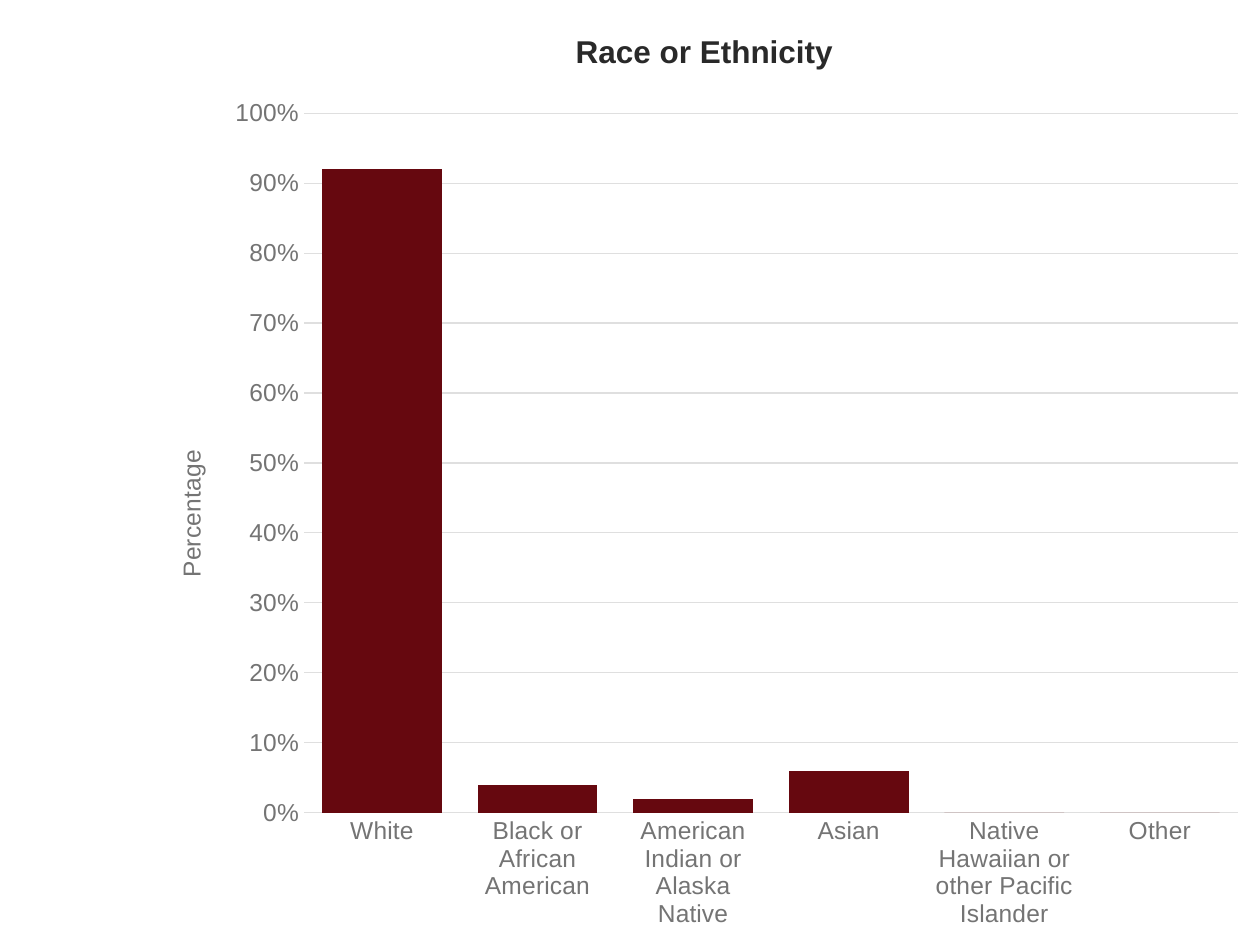
"""Build a slide with a column chart of race or ethnicity shares."""
from dataclasses import dataclass

from lxml.etree import SubElement
from pptx import Presentation
from pptx.chart.data import CategoryChartData
from pptx.dml.color import RGBColor
from pptx.enum.chart import XL_CHART_TYPE, XL_TICK_MARK
from pptx.oxml import parse_xml
from pptx.oxml.ns import nsdecls, qn
from pptx.util import Inches, Pt

TITLE = "Race or Ethnicity"
VALUE_TITLE = "Percentage"
SHARES = {
    "White": 0.92,
    "Black or African American": 0.04,
    "American Indian or Alaska Native": 0.02,
    "Asian": 0.06,
    "Native Hawaiian or other Pacific Islander": 0,
    "Other": 0,
}
PLOT_SHARES = {"x": 0.14, "y": 0.12, "w": 0.84, "h": 0.74}
SLIDE_WIDTH, SLIDE_HEIGHT = Inches(10), Inches(7.5)
CHART_LEFT = Inches(1.18)


@dataclass(frozen=True)
class Theme:
    font: str = "Arial"
    dark: str = "292929"
    muted: str = "747474"
    rule: str = "DFDFDF"
    column: str = "66080F"
    base_size: int = 10
    label_size: int = 14
    title_size: int = 18
    rule_width: float = 0.75


THEME = Theme()


def style_font(font, size, color, bold=False):
    font.name, font.size, font.bold = THEME.font, Pt(size), bold
    font.color.rgb = RGBColor.from_string(color)


def style_rule(line):
    line.color.rgb = RGBColor.from_string(THEME.rule)
    line.width = Pt(THEME.rule_width)


def write_title(frame, text, size, color, bold=False):
    frame.text = text
    style_font(frame.paragraphs[0].font, size, color, bold)


def place_plot(chart):
    plot_area = chart._chartSpace.chart.plotArea
    for old_layout in plot_area.findall(qn("c:layout")):
        plot_area.remove(old_layout)
    layout = parse_xml(f"<c:layout {nsdecls('c')}/>")
    manual = SubElement(layout, qn("c:manualLayout"))
    settings = {"layoutTarget": "inner", "xMode": "edge", "yMode": "edge", **PLOT_SHARES}
    for tag, value in settings.items():
        SubElement(manual, qn(f"c:{tag}")).set("val", str(value))
    plot_area.insert(0, layout)


def style_axes(chart):
    categories, values = chart.category_axis, chart.value_axis
    for axis in (categories, values):
        axis.major_tick_mark = axis.minor_tick_mark = XL_TICK_MARK.NONE
        style_font(axis.tick_labels.font, THEME.label_size, THEME.muted)
    style_rule(categories.format.line)
    values.format.line.fill.background()
    values.minimum_scale, values.maximum_scale, values.major_unit = 0, 1, 0.1
    values.tick_labels.number_format = "0%"
    values.tick_labels.number_format_is_linked = False
    style_rule(values.major_gridlines.format.line)
    value_title = values.axis_title.text_frame
    write_title(value_title, VALUE_TITLE, THEME.label_size, THEME.muted)
    value_title._txBody.bodyPr.set("rot", "-5400000")


def add_share_chart(slide):
    data = CategoryChartData(number_format="0%")
    data.categories = list(SHARES)
    data.add_series("Series 1", list(SHARES.values()))
    chart = slide.shapes.add_chart(
        XL_CHART_TYPE.COLUMN_CLUSTERED, CHART_LEFT, 0,
        SLIDE_WIDTH - CHART_LEFT, SLIDE_HEIGHT, data,
    ).chart
    style_font(chart.font, THEME.base_size, THEME.dark)
    chart.has_legend = False
    write_title(chart.chart_title.text_frame, TITLE, THEME.title_size, THEME.dark, True)
    chart.chart_title.include_in_layout = False
    columns = chart.plots[0]
    columns.gap_width, columns.overlap = 30, -27
    columns.vary_by_categories = False
    fill = columns.series[0].format.fill
    fill.solid()
    fill.fore_color.rgb = RGBColor.from_string(THEME.column)
    style_axes(chart)
    place_plot(chart)


def main():
    deck = Presentation()
    deck.slide_width, deck.slide_height = SLIDE_WIDTH, SLIDE_HEIGHT
    add_share_chart(deck.slides.add_slide(deck.slide_layouts[6]))
    deck.save("out.pptx")


if __name__ == "__main__":
    main()
